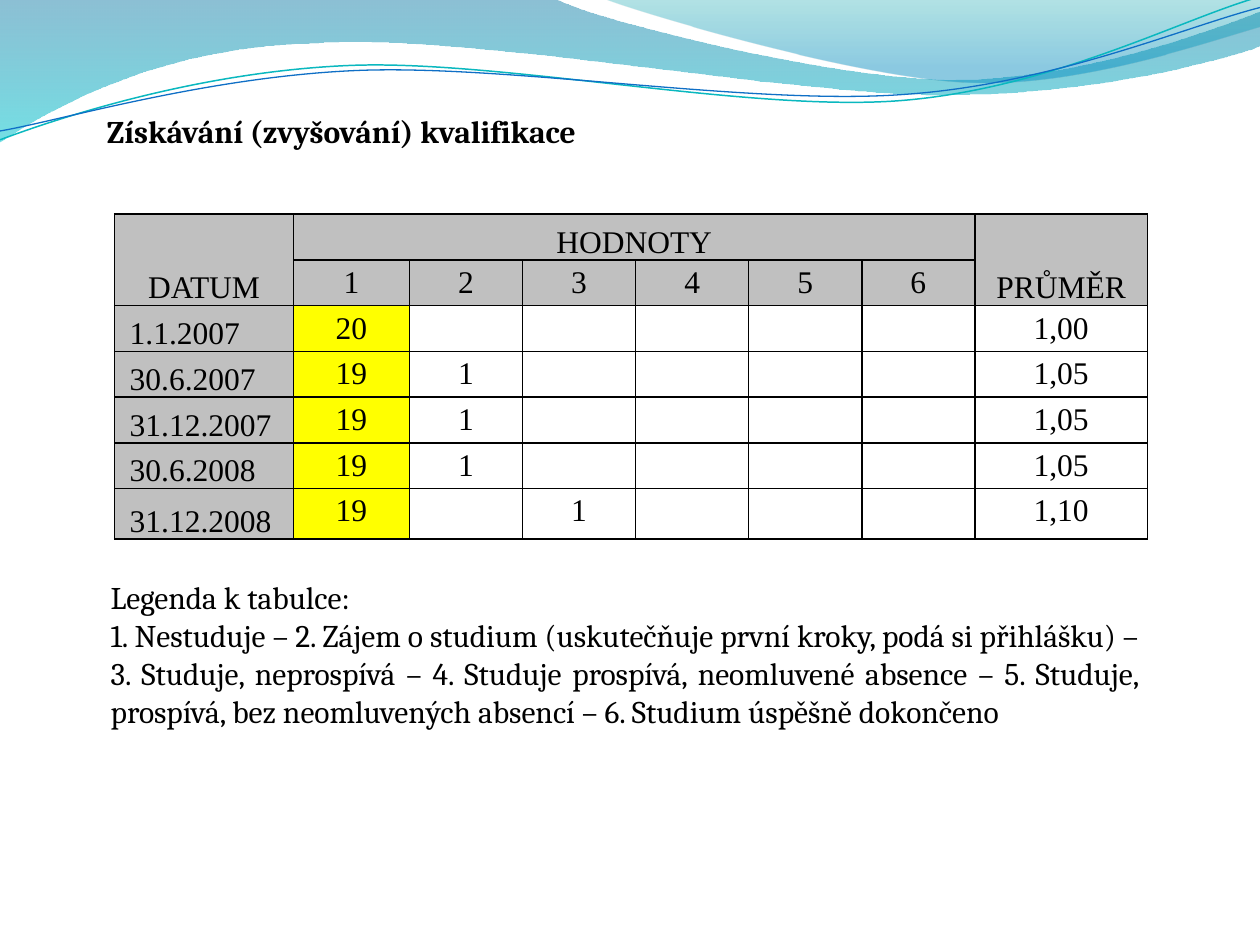
import math

import pptx
import pptx.util
import pptx.dml.color
import pptx.enum.text
from pptx.oxml import parse_xml
from pptx.oxml.ns import nsdecls

Inches, Pt = pptx.util.Inches, pptx.util.Pt
RGBColor = pptx.dml.color.RGBColor
ALIGN = pptx.enum.text.PP_ALIGN
ANCHOR = pptx.enum.text.MSO_ANCHOR

BLACK = RGBColor(0x00, 0x00, 0x00)
GRAY = RGBColor(0xC0, 0xC0, 0xC0)
YELLOW = RGBColor(0xFF, 0xFF, 0x00)
DEEP_BLUE = RGBColor(0x00, 0x74, 0xA1)
CYAN = RGBColor(0x00, 0xC6, 0xCF)
TEAL = RGBColor(0x00, 0xA1, 0xA9)
SKY = RGBColor(0x00, 0x8B, 0xBF)
TEAL_LINE = RGBColor(0x0A, 0xB8, 0xBF)
BLUE_LINE = RGBColor(0x0F, 0x6F, 0xC6)

HEADING_FONT = "Cambria"
TABLE_FONT = "Times New Roman"
CURVE_TILT = -2.7

# Each wave is a start point, then segments: one point is a line, three are a Bézier curve.
LEFT_WAVE = [
    [(0, 0)], [(4.4, -0.01)],
    [(4.76, 0.17), (6.64, 0.63), (7.58, 0.63)],
    [(8.53, 0.63), (9.58, 0.26), (10, 0.09)], [(10.01, 0.36)],
    [(9.83, 0.44), (8.7, 0.76), (7.46, 0.75)],
    [(6.22, 0.75), (3.82, 0.28), (2.57, 0.34)],
    [(1.29, 0.36), (0.46, 0.83), (-0.01, 1.13)], [(0, 0)],
]
RIGHT_WAVE = [
    [(4.79, -0.01)],
    [(5.09, 0.11), (6.82, 0.62), (7.69, 0.65)],
    [(8.56, 0.69), (9.61, 0.32), (10, 0.21)], [(10, 0)], [(4.79, -0.01)],
]
TEAL_CURVE = [
    [(0, 1.11)],
    [(0.48, 0.93), (1.58, 0.57), (2.77, 0.52)],
    [(3.95, 0.47), (5.93, 0.89), (7.13, 0.8)],
    [(8.33, 0.71), (9.38, 0.15), (9.98, -0.02)],
]
BLUE_CURVE = [
    [(0, 1.04)],
    [(0.47, 0.96), (1.64, 0.61), (2.83, 0.56)],
    [(4.03, 0.51), (5.97, 0.84), (7.17, 0.75)],
    [(8.36, 0.67), (9.41, 0.21), (10, 0.06)],
]

TABLE_WIDTH, TABLE_HEIGHT = 8.2, 2.58
DATE_WIDTH, FIRST_WIDTH, AVERAGE_WIDTH = 1.42, 0.92, 1.37
VALUE_WIDTH = (TABLE_WIDTH - DATE_WIDTH - FIRST_WIDTH - AVERAGE_WIDTH) / 5
COLUMN_WIDTHS = [DATE_WIDTH, FIRST_WIDTH] + [VALUE_WIDTH] * 5 + [AVERAGE_WIDTH]
LAST_HEIGHT = 0.4
ROW_HEIGHTS = [(TABLE_HEIGHT - LAST_HEIGHT) / 6] * 6 + [LAST_HEIGHT]
RATINGS = [
    ["DATUM", "HODNOTY", "", "", "", "", "", "PRŮMĚR"],
    ["", "1", "2", "3", "4", "5", "6", ""],
    ["1.1.2007", "20", "", "", "", "", "", "1,00"],
    ["30.6.2007", "19", "1", "", "", "", "", "1,05"],
    ["31.12.2007", "19", "1", "", "", "", "", "1,05"],
    ["30.6.2008", "19", "1", "", "", "", "", "1,05"],
    ["31.12.2008", "19", "", "1", "", "", "", "1,10"],
]
LEGEND = [
    "Legenda k tabulce:",
    "1. Nestuduje – 2. Zájem o studium (uskutečňuje první kroky, podá si přihlášku) – "
    "3. Studuje, neprospívá – 4. Studuje prospívá, neomluvené absence – "
    "5. Studuje, prospívá, bez neomluvených absencí – 6. Studium úspěšně dokončeno",
]


def add_wave(slide, wave, closed):
    """Build the outline through the end points, then bend its curved segments."""
    ends = [tuple(map(Inches, segment[-1])) for segment in wave]
    builder = slide.shapes.build_freeform(*ends[0])
    builder.add_line_segments(ends[1:-1] if closed else ends[1:], close=closed)
    shape = builder.convert_to_shape()
    shape.shadow.inherit = False
    for line, segment in zip(shape._element.xpath(".//a:lnTo"), wave[1:]):
        if len(segment) == 3:
            points = "".join(
                f'<a:pt x="{Inches(x) - shape.left}" y="{Inches(y) - shape.top}"/>'
                for x, y in segment)
            line.getparent().replace(line, parse_xml(
                f'<a:cubicBezTo {nsdecls("a")}>{points}</a:cubicBezTo>'))
    return shape


def add_gradient_wave(slide, wave, stops):
    """Add a filled wave; each stop is position, colour, opacity in percent."""
    shape = add_wave(slide, wave, True)
    shape.line.fill.background()
    shape.fill.gradient()
    shape.fill.gradient_angle = 270
    for stop, (position, color, _) in zip(shape.fill.gradient_stops, stops):
        stop.position = position
        stop.color.rgb = color
    colors = shape._element.xpath(".//a:gs/a:srgbClr")
    for color_element, (_, _, opacity) in zip(colors, stops):
        color_element.append(parse_xml(
            f'<a:alpha {nsdecls("a")} val="{opacity * 1000}"/>'))


def turn(point, center, degrees):
    """Turn a point clockwise about a center."""
    dx, dy = point[0] - center[0], point[1] - center[1]
    angle = math.radians(degrees)
    return (center[0] + dx * math.cos(angle) - dy * math.sin(angle),
            center[1] + dx * math.sin(angle) + dy * math.cos(angle))


def add_tilted_curve(slide, wave, center, color, width):
    level = [[turn(point, center, -CURVE_TILT) for point in segment] for segment in wave]
    shape = add_wave(slide, level, False)
    shape.rotation = CURVE_TILT
    shape.fill.background()
    shape.line.color.rgb = color
    shape.line.width = Pt(width)


def add_run(paragraph, text, font_name, bold=False):
    run = paragraph.add_run()
    run.text = text
    run.font.name = font_name
    run.font.size = Pt(18)
    run.font.bold = bold
    run.font.color.rgb = BLACK


def add_text(slide, box, paragraphs, align, anchor=ANCHOR.TOP, bold=False):
    frame = slide.shapes.add_textbox(*map(Inches, box)).text_frame
    frame.word_wrap = True
    frame.vertical_anchor = anchor
    for index, text in enumerate(paragraphs):
        paragraph = frame.add_paragraph() if index else frame.paragraphs[0]
        paragraph.alignment = align
        add_run(paragraph, text, HEADING_FONT, bold)


def set_borders(cell):
    properties = cell._tc.get_or_add_tcPr()
    for index, side in enumerate("LRTB"):
        properties.insert(index, parse_xml(
            f'<a:ln{side} {nsdecls("a")} w="12700"><a:solidFill>'
            f'<a:srgbClr val="{BLACK}"/></a:solidFill></a:ln{side}>'))


def fill_cell(cell, text, row, column):
    is_date = row > 1 and column == 0
    cell.margin_left = Inches(0.12 if is_date else 0)
    cell.margin_right = cell.margin_top = cell.margin_bottom = 0
    cell.vertical_anchor = ANCHOR.BOTTOM if row == 0 or is_date else ANCHOR.TOP
    if text:
        paragraph = cell.text_frame.paragraphs[0]
        paragraph.alignment = ALIGN.LEFT if is_date else ALIGN.CENTER
        paragraph.line_spacing = 1.15
        add_run(paragraph, text, TABLE_FONT)
    if row < 2 or column < 2:
        cell.fill.solid()
        cell.fill.fore_color.rgb = GRAY if row < 2 or column == 0 else YELLOW
    else:
        cell.fill.background()
    set_borders(cell)


def add_ratings_table(slide):
    table = slide.shapes.add_table(
        len(ROW_HEIGHTS), len(COLUMN_WIDTHS), Inches(0.91), Inches(1.7),
        Inches(TABLE_WIDTH), Inches(TABLE_HEIGHT)).table
    table.first_row = table.horz_banding = False
    for column, width in zip(table.columns, COLUMN_WIDTHS):
        column.width = Inches(width)
    for row, height in zip(table.rows, ROW_HEIGHTS):
        row.height = Inches(height)
    for row, texts in enumerate(RATINGS):
        for column, text in enumerate(texts):
            fill_cell(table.cell(row, column), text, row, column)
    for top, left, bottom, right in [(0, 0, 1, 0), (0, 1, 0, 6), (0, 7, 1, 7)]:
        table.cell(top, left).merge(table.cell(bottom, right))


def main():
    presentation = pptx.Presentation()
    presentation.slide_width, presentation.slide_height = Inches(10), Inches(7.5)
    slide = presentation.slides.add_slide(presentation.slide_layouts[6])
    add_gradient_wave(slide, LEFT_WAVE, [(0, DEEP_BLUE, 45), (1, CYAN, 55)])
    add_gradient_wave(slide, RIGHT_WAVE, [(0, TEAL, 30), (0.8, SKY, 45)])
    add_tilted_curve(slide, TEAL_CURVE, (4.99, 0.57), TEAL_LINE, 0.85)
    add_tilted_curve(slide, BLUE_CURVE, (5, 0.59), BLUE_LINE, 0.75)
    add_ratings_table(slide)
    add_text(slide, (0.75, 0.84, 8.28, 0.4), ["Získávání (zvyšování) kvalifikace"],
             ALIGN.LEFT, bold=True)
    add_text(slide, (0.78, 4.38, 8.36, 1.62), LEGEND, ALIGN.JUSTIFY, ANCHOR.MIDDLE)
    presentation.save("out.pptx")


if __name__ == "__main__":
    main()
